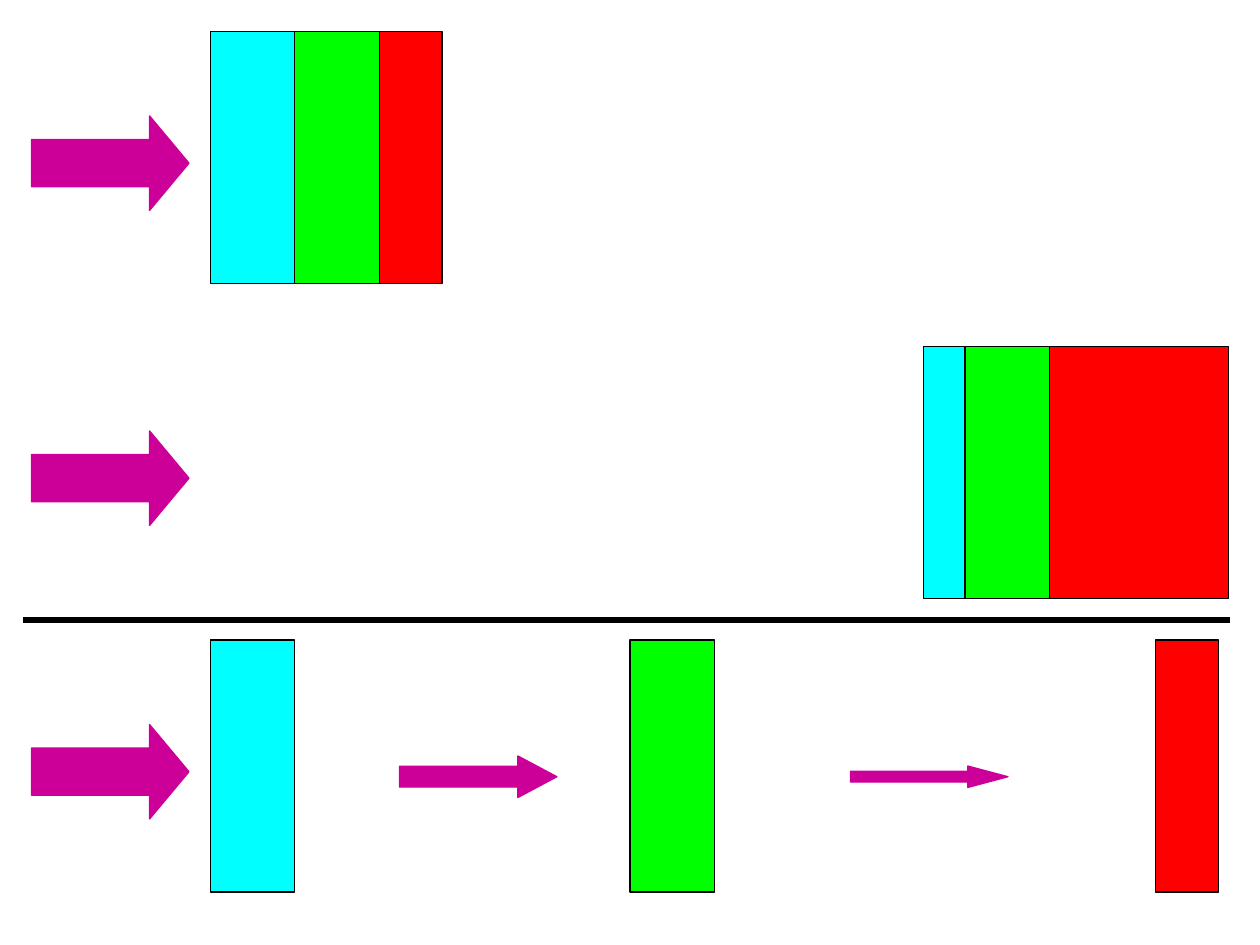
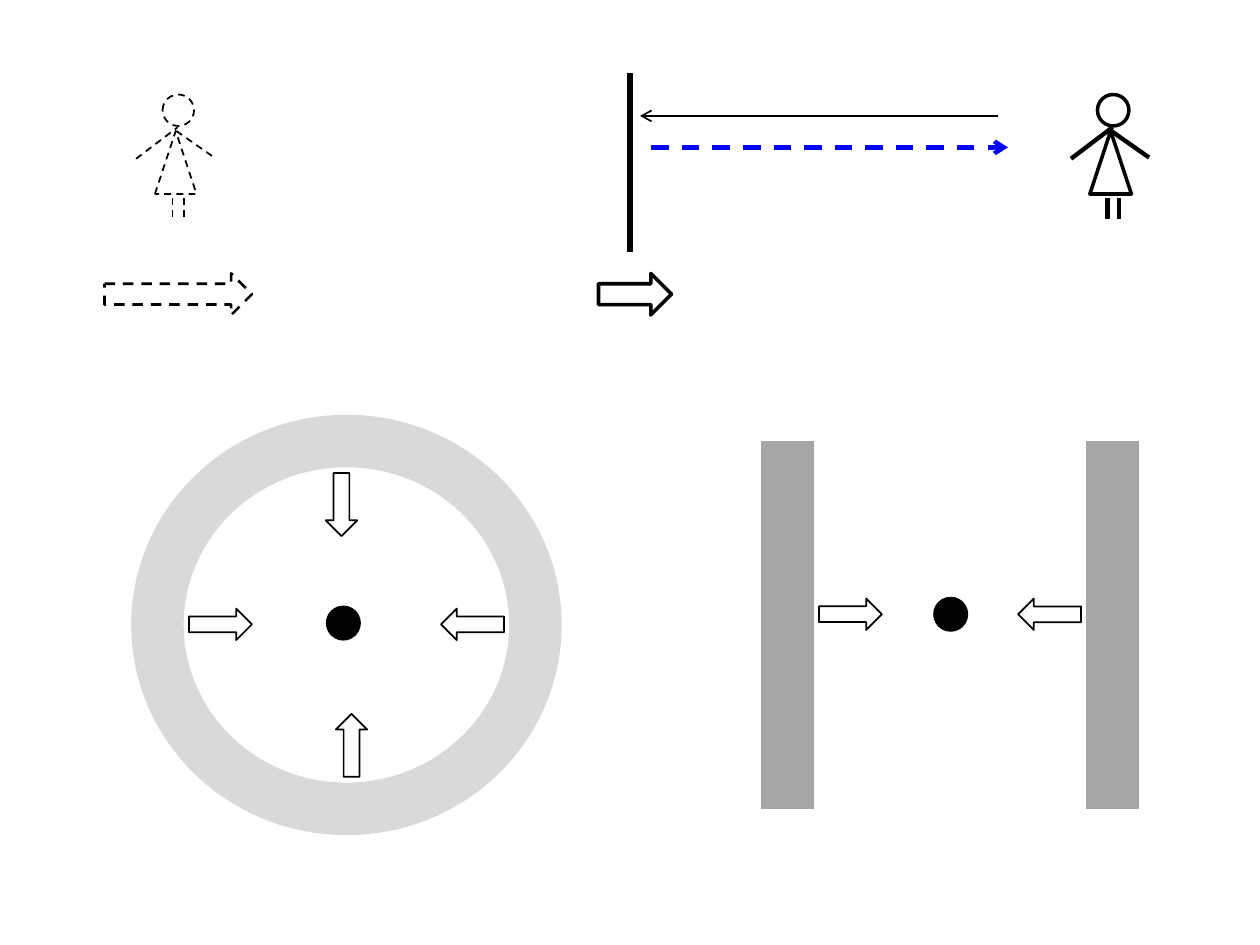
"""Build two diagram slides: layered blocks with arrows, and figures with pressure arrows."""
from pptx import Presentation
from pptx import util as u
from pptx.dml.color import RGBColor
from pptx.enum import dml, shapes
from pptx.oxml.ns import qn
from lxml import etree

COLORS = {"cyan": "00FFFF", "green": "00FF00", "red": "FF0000", "magenta": "CC0099",
          "black": "000000", "blue": "0000FF", "light": "D9D9D9", "grey": "A6A6A6"}
RECT, OVAL = shapes.MSO_SHAPE.RECTANGLE, shapes.MSO_SHAPE.OVAL
ARROW, TRIANGLE = shapes.MSO_SHAPE.RIGHT_ARROW, shapes.MSO_SHAPE.ISOSCELES_TRIANGLE
DASH = dml.MSO_LINE.DASH

BAR_H = 2
STACKS = [
    (0.25, 1.67, [("cyan", 0.67), ("green", 0.67), ("red", 0.5)]),
    (2.75, 7.33, [("cyan", 0.33), ("green", 0.67), ("red", 1.42)]),
]
SPREAD_TOP = 5.08
SPREAD = [("cyan", 1.67, 0.67), ("green", 5, 0.67), ("red", 9.17, 0.5)]
BEAM_X, BEAM_W, BEAM_H, BEAM_HEAD = 0.25, 1.25, 0.75, 0.417
WEAK_BEAMS = [(3.17, 6, 0.33, 0.938), (6.75, 6.08, 0.17, 1.875)]
DIVIDER = ((0.18, 4.92), (9.76, 4.92))

RING = (1.25, 3.5, 3, 2.92)
WALLS_X, WALL_TOP, WALL_BOTTOM = (6.25, 8.83), 3.5, 6.42
DOTS = [(2.6, 4.82), (7.42, 4.75)]
PRESSURE = [(2.54, 5.79, 270), (2.46, 3.88, 90), (1.5, 4.83, 0),
            (3.5, 4.83, 180), (6.5, 4.75, 0), (8.08, 4.75, 180)]

HEAD, DRESS = (0.21, 0.75, 0.25, 0.25), (0.15, 1.04, 0.33, 0.5)
LIMBS = [((0.29, 1.57), (0.29, 1.74)), ((0.38, 1.57), (0.38, 1.74)),
         ((0, 1.26), (0.33, 1.01)), ((0.32, 1.04), (0.62, 1.25))]
FIGURES = [(8.5, 2, 2.5, None), (1.08, 1, 1, DASH)]
MIRROR = ((5, 0.58), (5, 2))
MOTIONS = [((4.75, 2.17, 0.58, 0.33), 2, None), ((0.83, 2.17, 1.17, 0.33), 1.5, DASH)]
RAYS = [((7.92, 0.92), (5.08, 0.92), "black", 1, None),
        ((5.17, 1.17), (8, 1.17), "blue", 2.5, DASH)]


def rgb(name):
    return RGBColor.from_string(COLORS[name])


def style_line(line, color, width, dash):
    line.fill.solid()
    line.fill.fore_color.rgb = rgb(color)
    for name, value in {"width": u.Pt(width), "dash_style": dash}.items():
        if value is not None:
            setattr(line, name, value)


def add_part(group, kind, box, fill=None, color="black", width=0.75, dash=None,
             rotation=0, head=None):
    sp = group.shapes.add_shape(kind, *map(u.Inches, box))
    sp.shadow.inherit = False
    sp.rotation = rotation
    if head:
        sp.adjustments[1] = head
    if fill:
        sp.fill.solid()
        sp.fill.fore_color.rgb = rgb(fill)
    else:
        sp.fill.background()
    style_line(sp.line, color, width, dash)


def add_line(group, start, end, color="black", width=1, dash=None, arrow=False):
    ln = group.shapes.add_connector(shapes.MSO_CONNECTOR.STRAIGHT,
                                    *map(u.Inches, (*start, *end)))
    style_line(ln.line, color, width, dash)
    props = ln._element.spPr
    if arrow:
        etree.SubElement(props.find(qn("a:ln")), qn("a:tailEnd"), type="arrow")
    etree.SubElement(props, qn("a:effectLst"))


def add_beam(group, x, y, height, head):
    add_part(group, ARROW, (x, y, BEAM_W, height), "magenta", "magenta", head=head)


def build_layers(s):
    stacked = s.shapes.add_group_shape()
    for top, x, bars in STACKS:
        for color, width in bars:
            add_part(stacked, RECT, (x, top, width, BAR_H), color)
            x += width
        add_beam(stacked, BEAM_X, top + 0.67, BEAM_H, BEAM_HEAD)
    spread = s.shapes.add_group_shape()
    for color, x, width in SPREAD:
        add_part(spread, RECT, (x, SPREAD_TOP, width, BAR_H), color)
    for beam in [(BEAM_X, SPREAD_TOP + 0.67, BEAM_H, BEAM_HEAD)] + WEAK_BEAMS:
        add_beam(spread, *beam)
    add_line(s, *DIVIDER, width=3)


def build_pressure(s):
    group = s.shapes.add_group_shape()
    add_part(group, OVAL, RING, color="light", width=30)
    for x in WALLS_X:
        add_line(group, (x, WALL_TOP), (x, WALL_BOTTOM), "grey", 30)
    for x, y in DOTS:
        add_part(group, OVAL, (x, y, 0.25, 0.25), "black", width=2)
    for x, y, rotation in PRESSURE:
        add_part(group, ARROW, (x, y, 0.5, 0.25), width=1, rotation=rotation)


def build_mirror(s):
    group = s.shapes.add_group_shape()
    for x, outline, limb, dash in FIGURES:
        for kind, (dx, y, w, h) in ((OVAL, HEAD), (TRIANGLE, DRESS)):
            add_part(group, kind, (x + dx, y, w, h), width=outline, dash=dash)
        for (x1, y1), (x2, y2) in LIMBS:
            add_line(group, (x + x1, y1), (x + x2, y2), width=limb, dash=dash)
    add_line(group, *MIRROR, width=4)
    for box, width, dash in MOTIONS:
        add_part(group, ARROW, box, width=width, dash=dash)
    for ray in RAYS:
        add_line(group, *ray, arrow=True)


def main():
    prs = Presentation()
    prs.slide_width, prs.slide_height = u.Inches(10), u.Inches(7.5)
    for builders in [(build_layers,), (build_pressure, build_mirror)]:
        s = prs.slides.add_slide(prs.slide_layouts[6])
        for build in builders:
            build(s)
    prs.save("out.pptx")


if __name__ == "__main__":
    main()
